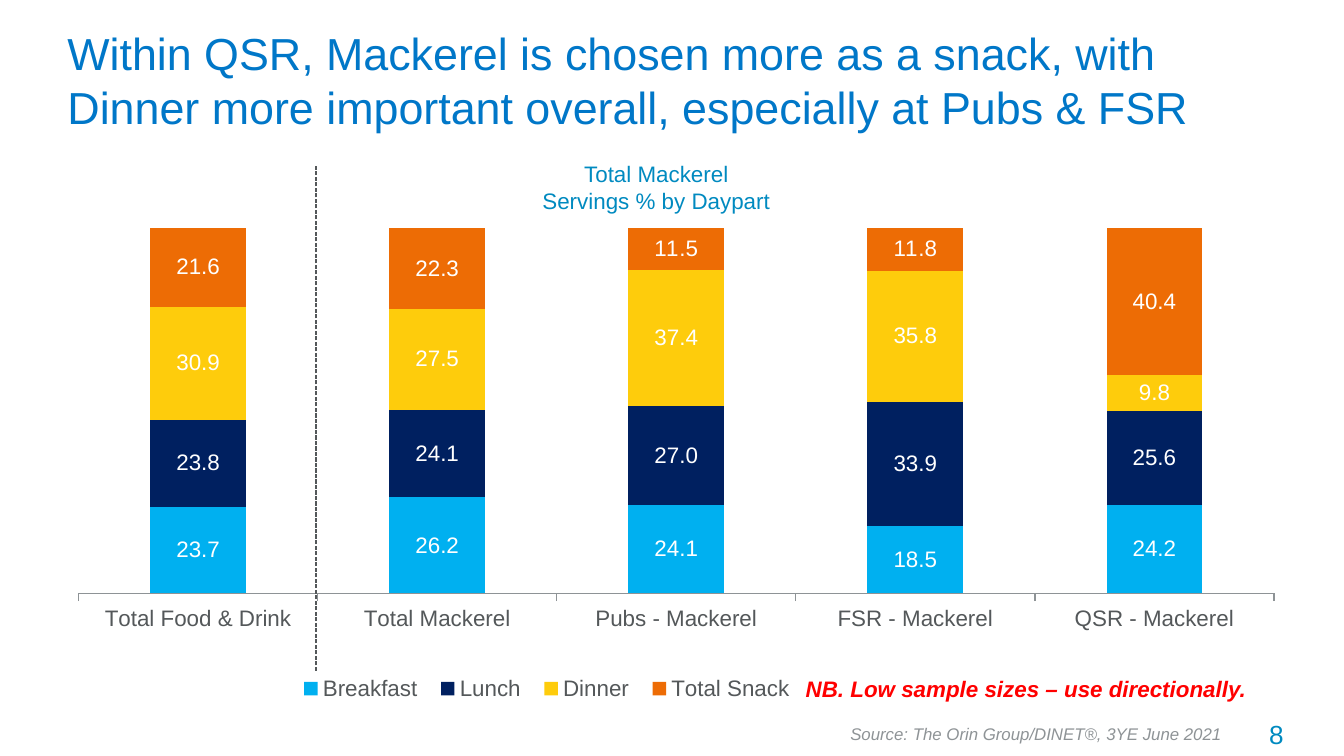
from lxml.etree import SubElement
from pptx import Presentation
from pptx.chart.data import CategoryChartData
from pptx.dml.color import RGBColor
from pptx.enum.chart import XL_CHART_TYPE, XL_LABEL_POSITION, XL_LEGEND_POSITION, XL_TICK_MARK
from pptx.enum.dml import MSO_LINE
from pptx.enum.shapes import MSO_CONNECTOR
from pptx.enum.text import MSO_ANCHOR, MSO_AUTO_SIZE, PP_ALIGN
from pptx.oxml.ns import qn
from pptx.util import Cm, Pt

TITLE = ("Within QSR, Mackerel is chosen more as a snack, with Dinner more "
         "important overall, especially at Pubs & FSR")
CATEGORIES = ["Total Food & Drink", "Total Mackerel", "Pubs - Mackerel",
              "FSR - Mackerel", "QSR - Mackerel"]
DAYPARTS = [
    ("Breakfast", "00B0F0", (23.7, 26.2, 24.1, 18.5, 24.2)),
    ("Lunch", "002060", (23.8, 24.1, 27.0, 33.9, 25.6)),
    ("Dinner", "FECC0C", (30.9, 27.5, 37.4, 35.8, 9.8)),
    ("Total Snack", "ED6C05", (21.6, 22.3, 11.5, 11.8, 40.4)),
]
THEME = {
    "font": "Arial", "title": "0077C8", "accent": "008AC0", "text": "54585A",
    "muted": "8E9396", "warning": "FF0000", "label": "FFFFFF",
    "title_size": 24, "body_size": 12, "number_size": 14, "source_size": 9,
}
NOTES = [
    ("Total Mackerel\nServings % by Daypart", (9.98, 2.9, 4.85, 1.27),
     "body_size", "accent", PP_ALIGN.CENTER, False, False),
    ("8", (22.48, 13.44, 2.03, 0.86), "number_size", "accent", PP_ALIGN.RIGHT, False, False),
    ("NB. Low sample sizes – use directionally.", (14.48, 12.62, 9.83, 0.76),
     "body_size", "warning", PP_ALIGN.CENTER, True, True),
    ("Source: The Orin Group/DINET®, 3YE June 2021", (15.82, 13.54, 8.03, 0.64),
     "source_size", "muted", PP_ALIGN.LEFT, False, True),
]
CHART_BOX = (1.02, 3.4, 23.29, 10.01)
PLOT_LAYOUT = {"layoutTarget": "inner", "xMode": "edge", "yMode": "edge",
               "x": 0.02, "y": 0.09, "w": 0.97, "h": 0.69}
LEGEND_LAYOUT = {"xMode": "edge", "yMode": "edge",
                 "x": 0.19, "y": 0.92, "w": 0.42, "h": 0.08}


def color(name):
    return RGBColor.from_string(THEME[name])


def style_font(font, size, color_name, bold=False, italic=False):
    font.name = THEME["font"]
    font.size = Pt(THEME[size])
    font.color.rgb = color(color_name)
    font.bold = bold
    font.italic = italic


def set_layout(element, position, values):
    for old in element.findall(qn("c:layout")):
        element.remove(old)
    layout = SubElement(element, qn("c:layout"))
    manual = SubElement(layout, qn("c:manualLayout"))
    for tag, value in values.items():
        SubElement(manual, qn(f"c:{tag}")).set("val", str(value))
    element.insert(position, layout)


def add_title(slide):
    title = slide.shapes.title
    title.left, title.top, title.width, title.height = map(Cm, (1.02, 0.6, 22.81, 1.8))
    frame = title.text_frame
    frame.text = TITLE
    frame.word_wrap = True
    frame.auto_size = MSO_AUTO_SIZE.NONE
    frame.vertical_anchor = MSO_ANCHOR.MIDDLE
    paragraph = frame.paragraphs[0]
    paragraph.alignment = PP_ALIGN.LEFT
    style_font(paragraph.runs[0].font, "title_size", "title")


def add_daypart_chart(slide):
    data = CategoryChartData(number_format="#,##0.0")
    data.categories = CATEGORIES
    for name, _, values in DAYPARTS:
        data.add_series(name, values)
    chart = slide.shapes.add_chart(
        XL_CHART_TYPE.COLUMN_STACKED_100, *map(Cm, CHART_BOX), data).chart
    style_font(chart.font, "body_size", "text")
    chart.has_title = False
    chart.has_legend = True
    chart.legend.position = XL_LEGEND_POSITION.BOTTOM
    chart.legend.include_in_layout = False
    chart.value_axis.visible = False
    chart.value_axis.has_major_gridlines = False
    chart.category_axis.major_tick_mark = XL_TICK_MARK.OUTSIDE
    chart.category_axis.format.line.color.rgb = color("muted")

    plot = chart.plots[0]
    plot.gap_width = 150
    plot.overlap = 100
    plot.vary_by_categories = False
    for series, (_, fill, _) in zip(plot.series, DAYPARTS):
        series.format.fill.solid()
        series.format.fill.fore_color.rgb = RGBColor.from_string(fill)
        labels = series.data_labels
        labels.show_value = True
        labels.number_format = "#,##0.0"
        labels.number_format_is_linked = False
        labels.position = XL_LABEL_POSITION.CENTER
        style_font(labels.font, "body_size", "label")

    plot_area = chart.element.find(qn("c:chart")).find(qn("c:plotArea"))
    set_layout(plot_area, 0, PLOT_LAYOUT)
    set_layout(chart.element.find(qn("c:chart")).find(qn("c:legend")), 1, LEGEND_LAYOUT)


def add_divider(slide):
    divider = slide.shapes.add_connector(
        MSO_CONNECTOR.STRAIGHT, *map(Cm, (5.97, 12.67, 5.97, 3.12)))
    divider.line.color.rgb = color("text")
    divider.line.width = Pt(0.75)
    divider.line.dash_style = MSO_LINE.SQUARE_DOT
    SubElement(divider.element.spPr, qn("a:effectLst"))


def add_note(slide, text, box, size, color_name, alignment, bold, italic):
    frame = slide.shapes.add_textbox(*map(Cm, box)).text_frame
    frame.text = text
    frame.word_wrap = True
    for paragraph in frame.paragraphs:
        paragraph.alignment = alignment
        for run in paragraph.runs:
            style_font(run.font, size, color_name, bold, italic)


def main():
    presentation = Presentation()
    presentation.slide_width = Cm(25.4)
    presentation.slide_height = Cm(14.28)
    slide = presentation.slides.add_slide(presentation.slide_layouts[5])
    add_title(slide)
    add_daypart_chart(slide)
    add_divider(slide)
    for note in NOTES:
        add_note(slide, *note)
    presentation.save("out.pptx")


if __name__ == "__main__":
    main()
